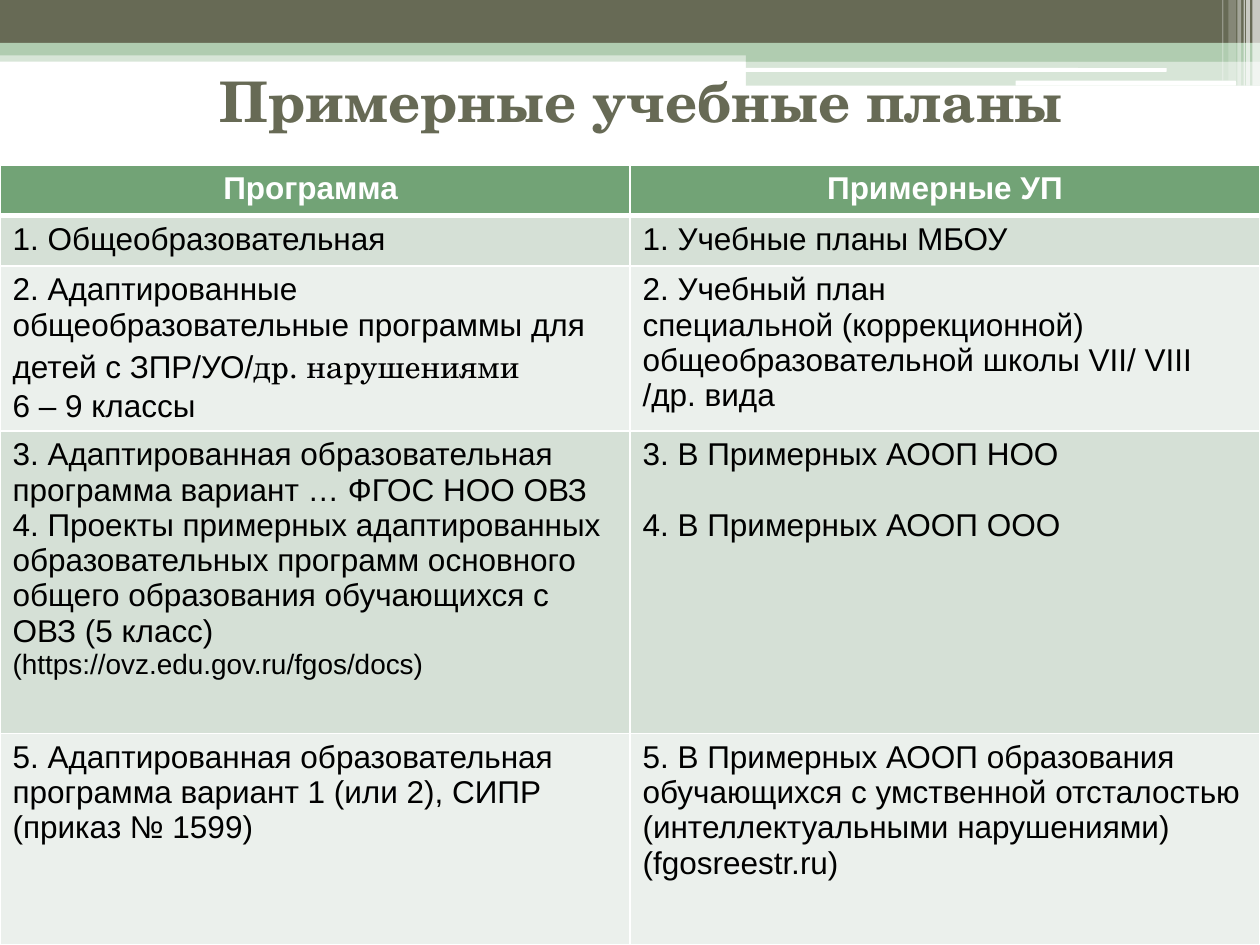
from lxml.etree import SubElement
from pptx import Presentation
from pptx.dml.color import RGBColor as RGB
from pptx.enum.shapes import MSO_SHAPE as SHAPE
from pptx.enum.text import MSO_ANCHOR as ANCHOR, PP_ALIGN as ALIGN
from pptx.oxml.ns import qn
from pptx.util import Inches, Pt

THEME = {
    "olive": "676A55", "mint": "B0CCB0", "white": "FFFFFF", "black": "000000",
    "head": "72A376", "bands": ("D5E0D6", "EBF0EC"),
    "sans": "Arial", "serif": "TeX Gyre Schola",
    "title": 32, "body": 18, "small": 16, "gap": 20.5,
}
W, H = 10, 7.5

# Content: a cell is a list of paragraphs, a paragraph a list of (text, format)
TITLE = "Примерные учебные планы"
HEADS = ["Программа ", "Примерные УП"]
SERIF, SMALL = {"name": THEME["serif"]}, {"size": Pt(THEME["small"])}
ROWS = [
    ([[("1. Общеобразовательная", {})]],
     [[("1. Учебные планы МБОУ", {})]]),
    ([[("2. Адаптированные общеобразовательные программы для детей с ЗПР/УО/", {}),
       ("др. нарушениями", SERIF)],
      [("6 – 9 классы", {})]],
     [[("2. Учебный план", {})],
      [("специальной (коррекционной) общеобразовательной школы VII/ VIII /др. вида", {})]]),
    ([[("3. Адаптированная образовательная программа вариант … ФГОС НОО ОВЗ", {})],
      [("4. Проекты примерных адаптированных образовательных программ основного "
        "общего образования обучающихся с ОВЗ (5 класс) ", {}),
       ("(https://ovz.edu.gov.ru/fgos/docs)", SMALL)]],
     [[("3. В Примерных АООП НОО", {})],
      [("4. В Примерных АООП ООО", {})]]),
    ([[("5. Адаптированная образовательная программа вариант 1 (или 2), СИПР "
        "(приказ № 1599)", {})]],
     [[("5. В Примерных АООП образования обучающихся с умственной отсталостью "
        "(интеллектуальными нарушениями) (fgosreestr.ru)", {})]]),
]
SPACED = {(3, 1)}  # cells whose paragraphs stand one line apart
ROW_HEIGHTS = [0.37, 0.38, 1.31, 2.4, 1.68]
TABLE_TOP = 1.31

# Header bands: left, top, width, height, colour, opacity in percent
BANDS = [
    (0, 0.4, W, 0.09, "mint", 50),
    (0, 0, W, 0.34, "olive", 100),
    (0, 0.34, W, 0.1, "mint", 100),
    (5.92, 0.39, 4.08, 0.1, "mint", 100),
    (5.92, 0.48, 4.08, 0.2, "mint", 50),
]
SLOTS = [(5.91, 0.54, 3.35, 0.03), (8.06, 0.64, 1.75, 0.04)]
# Vertical stripes: left, width, height, opacity in percent
STRIPES = [
    (9.94, 0.06, 0.68, 65), (9.89, 0.03, 0.68, 65), (9.87, 0.01, 0.68, 60),
    (9.82, 0.03, 0.68, 40), (9.75, 0.06, 0.64, 20), (9.7, 0.01, 0.64, 30),
]


def add_bar(slide, x, y, w, h, color, opacity=100, kind=SHAPE.RECTANGLE):
    sp = slide.shapes.add_shape(kind, *map(Inches, (x, y, w, h)))
    sp.shadow.inherit = False
    sp.line.fill.background()
    sp.fill.solid()
    sp.fill.fore_color.rgb = RGB.from_string(THEME[color])
    if opacity < 100:
        clr = sp.fill._xPr.find(".//" + qn("a:srgbClr"))
        SubElement(clr, qn("a:alpha"), val=str(opacity * 1000))


def add_run(p, text, color, **formats):
    r = p.add_run()
    r.text = text
    for key, value in formats.items():
        setattr(r.font, key, value)
    r.font.color.rgb = RGB.from_string(color)


def set_borders(cell, bottom):
    tcPr = cell._tc.get_or_add_tcPr()
    widths = {"a:lnL": 1, "a:lnR": 1, "a:lnT": 1, "a:lnB": bottom}
    for i, (tag, width) in enumerate(widths.items()):
        ln = tcPr.makeelement(qn(tag), {"w": str(Pt(width))})
        fill = SubElement(ln, qn("a:solidFill"))
        SubElement(fill, qn("a:srgbClr"), val=THEME["white"])
        tcPr.insert(i, ln)


def fill_cell(cell, paragraphs, fill, color, bold, align, gap, bottom):
    cell.fill.solid()
    cell.fill.fore_color.rgb = RGB.from_string(fill)
    set_borders(cell, bottom)
    tf = cell.text_frame
    for i, runs in enumerate(paragraphs):
        p = tf.add_paragraph() if i else tf.paragraphs[0]
        p.alignment = align
        if i and gap:
            p.space_before = Pt(gap)
        for text, extra in runs:
            base = {"name": THEME["sans"], "size": Pt(THEME["body"]), "bold": bold}
            add_run(p, text, color, **{**base, **extra})


prs = Presentation()
prs.slide_width, prs.slide_height = Inches(W), Inches(H)
s = prs.slides.add_slide(prs.slide_layouts[6])

# Header decoration
for band in BANDS:
    add_bar(s, *band)
for slot in SLOTS:
    add_bar(s, *slot, "white", kind=SHAPE.ROUNDED_RECTANGLE)
for x, w, h, opacity in STRIPES:
    add_bar(s, x, 0, w, h, "white", opacity)

# Title
tf = s.shapes.add_textbox(*map(Inches, (0.59, 0.21, 9, 1.17))).text_frame
tf.word_wrap = True
tf.vertical_anchor = ANCHOR.MIDDLE
p = tf.paragraphs[0]
p.alignment = ALIGN.CENTER
add_run(p, TITLE, THEME["olive"], name=THEME["serif"], size=Pt(THEME["title"]), bold=True)

# Table of programmes and curricula
table = s.shapes.add_table(
    len(ROW_HEIGHTS), len(HEADS), 0, Inches(TABLE_TOP), Inches(W),
    Inches(sum(ROW_HEIGHTS))).table
for row, height in zip(table.rows, ROW_HEIGHTS):
    row.height = Inches(height)
for c, head in enumerate(HEADS):
    fill_cell(table.cell(0, c), [[(head, {})]], THEME["head"], THEME["white"],
              True, ALIGN.CENTER, 0, 3)
for r, cells in enumerate(ROWS, 1):
    for c, paragraphs in enumerate(cells):
        gap = THEME["gap"] if (r, c) in SPACED else 0
        fill_cell(table.cell(r, c), paragraphs, THEME["bands"][(r - 1) % 2],
                  THEME["black"], False, ALIGN.LEFT, gap, 1)

prs.save("out.pptx")
